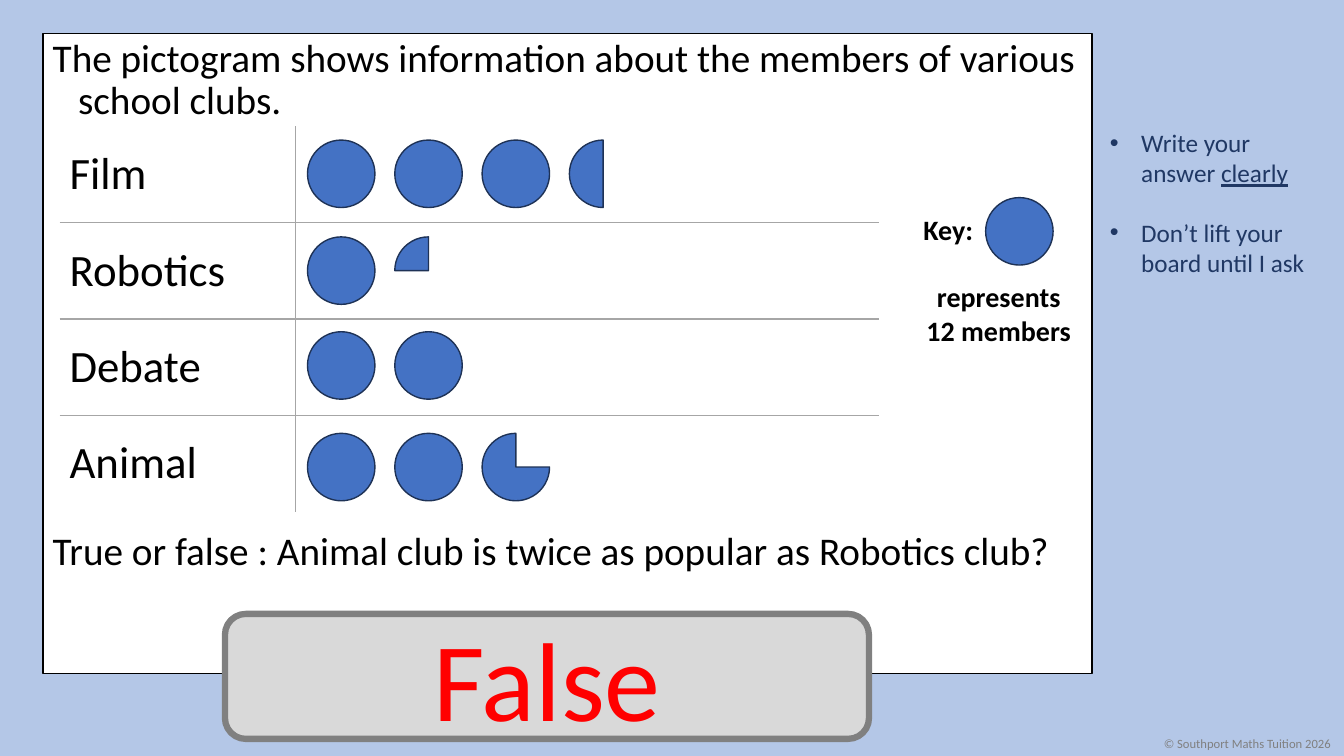
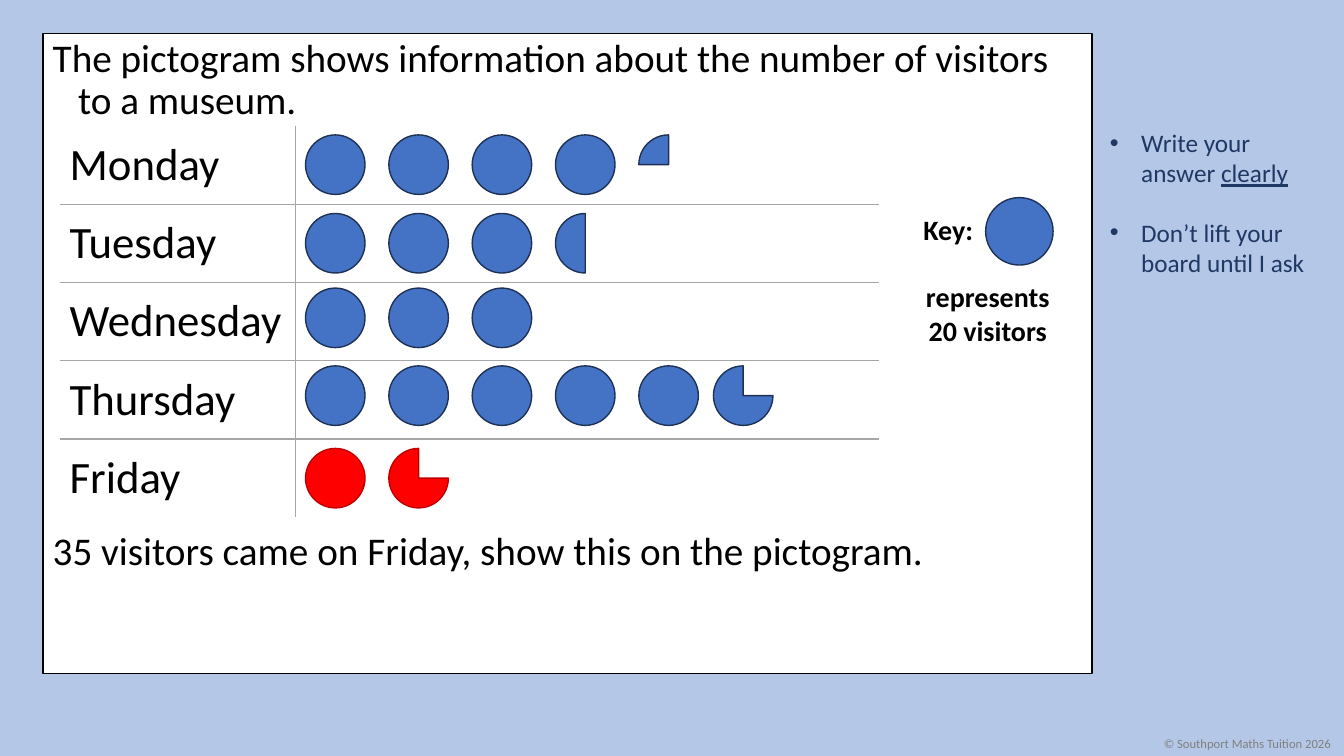
from dataclasses import dataclass

from lxml.etree import SubElement
from pptx import Presentation
from pptx.dml.color import RGBColor
from pptx.enum.shapes import MSO_SHAPE
from pptx.enum.text import MSO_ANCHOR, PP_ALIGN
from pptx.oxml.ns import qn
from pptx.util import Cm, Pt


@dataclass(frozen=True)
class Theme:
    font: str = "Calibri"
    background: str = "B4C7E7"
    panel: str = "FFFFFF"
    ink: str = "000000"
    tip: str = "203864"
    footer: str = "808080"
    grid: str = "A6A6A6"
    answer: str = "FF0000"
    button: str = "D9D9D9"
    button_edge: str = "808080"
    symbol: tuple = ("4472C4", "1E3256")
    solution: tuple = ("FF0000", "C00000")
    body_size: int = 28
    label_size: int = 32
    key_size: int = 20
    tip_size: int = 18
    footer_size: int = 9
    answer_size: int = 80


THEME = Theme()


@dataclass(frozen=True)
class Row:
    label: str
    top: float
    symbols: float
    colours: tuple = THEME.symbol
    last_shift: float = 0


TIPS = [
    [("Write your answer ", False), ("clearly", True)],
    [("Don’t lift your board until I ask", False)],
]
FOOTER = "© Southport Maths Tuition 2026"

QUESTIONS = [
    {
        "intro": "The pictogram shows information about the members of various school clubs.",
        "question": "True or false : Animal club is twice as popular as Robotics club?",
        "key": "12 members",
        "key_width": 4.3,
        "row_height": 2.43,
        "symbol": {"left": 7.75, "pitch": 2.2, "size": 1.7},
        "rows": [
            Row("Film", 3.53, 3.5),
            Row("Robotics", 5.97, 1.25),
            Row("Debate", 8.36, 2),
            Row("Animal", 10.92, 2.75),
        ],
        "answer": "False",
    },
    {
        "intro": "The pictogram shows information about the number of visitors to a museum.",
        "question": "35 visitors came on Friday, show this on the pictogram.",
        "key": "20 visitors",
        "key_width": 3.75,
        "row_height": 1.97,
        "symbol": {"left": 7.7, "pitch": 2.1, "size": 1.5},
        "rows": [
            Row("Monday", 3.4, 4.25),
            Row("Tuesday", 5.38, 3.5),
            Row("Wednesday", 7.26, 3),
            Row("Thursday", 9.22, 5.75, last_shift=-0.22),
            Row("Friday", 11.3, 1.75, THEME.solution),
        ],
        "answer": None,
    },
]

PANEL = (1.08, 0.84, 26.44, 16.13)
QUESTION_TOP = 13.26
TABLE_LEFT, TABLE_TOP = 1.5, 3.18
COLUMNS = (5.94, 14.71)


def rgb(value):
    return RGBColor.from_string(value)


def style(para, size, colour, bold=False):
    para.font.name = THEME.font
    para.font.size = Pt(size)
    para.font.bold = bold
    para.font.color.rgb = rgb(colour)


def hang(para, indent, bullet=None):
    properties = para._p.get_or_add_pPr()
    properties.set("marL", str(Cm(indent)))
    properties.set("indent", str(-Cm(indent)))
    if bullet:
        SubElement(properties, qn("a:buFont")).set("typeface", "Arial")
        SubElement(properties, qn("a:buChar")).set("char", bullet)


def add_text_box(page, place, wrap=True):
    frame = page.shapes.add_textbox(*map(Cm, place)).text_frame
    frame.word_wrap = wrap
    return frame


def add_figure(page, kind, place, fill, edge, width=1):
    figure = page.shapes.add_shape(kind, *map(Cm, place))
    figure.shadow.inherit = False
    figure.fill.solid()
    figure.fill.fore_color.rgb = rgb(fill)
    figure.line.color.rgb = rgb(edge)
    figure.line.width = Pt(width)
    return figure


def add_symbol(page, left, top, size, portion, colours):
    kind = MSO_SHAPE.OVAL if portion == 1 else MSO_SHAPE.PIE
    symbol = add_figure(page, kind, (left, top, size, size), *colours)
    if portion < 1:
        symbol.adjustments[0] = (270 - 360 * portion) * 0.6
        symbol.adjustments[1] = 270 * 0.6


def add_sentence(page, text, top, height):
    left, _, width, _ = PANEL
    para = add_text_box(page, (left, top, width, height)).paragraphs[0]
    para.text = text
    para.line_spacing = 0.9
    hang(para, 0.64)
    style(para, THEME.body_size, THEME.ink)


def add_frame(page):
    page.background.fill.solid()
    page.background.fill.fore_color.rgb = rgb(THEME.background)
    add_figure(page, MSO_SHAPE.RECTANGLE, PANEL, THEME.panel, THEME.ink)

    tips = add_text_box(page, (27.72, 3.08, 5.89, 4.11))
    for index, parts in enumerate(TIPS):
        para = tips.add_paragraph() if index else tips.paragraphs[0]
        hang(para, 0.79, "•")
        if index:
            para.space_before = Pt(21)
        style(para, THEME.tip_size, THEME.tip)
        for text, underlined in parts:
            span = para.add_run()
            span.text = text
            if underlined:
                span.font.underline = True

    footer = add_text_box(page, (29.08, 18.42, 4.78, 0.63), wrap=False).paragraphs[0]
    footer.text = FOOTER
    style(footer, THEME.footer_size, THEME.footer)


def set_borders(cell, visible):
    properties = cell._tc.get_or_add_tcPr()
    for side in "LRTB":
        line = SubElement(properties, qn(f"a:ln{side}"), w=str(Pt(1)))
        if side in visible:
            fill = SubElement(line, qn("a:solidFill"))
            SubElement(fill, qn("a:srgbClr")).set("val", THEME.grid)
        else:
            SubElement(line, qn("a:noFill"))


def add_grid(page, rows, row_height):
    place = (TABLE_LEFT, TABLE_TOP, sum(COLUMNS), row_height * len(rows))
    table = page.shapes.add_table(len(rows), len(COLUMNS), *map(Cm, place)).table
    table.first_row = table.horz_banding = False
    for column, width in zip(table.columns, COLUMNS):
        column.width = Cm(width)
    for index, row in enumerate(rows):
        table.rows[index].height = Cm(row_height)
        across = ("T" if index else "") + ("B" if index < len(rows) - 1 else "")
        for cell, upright in zip(table.rows[index].cells, "RL"):
            set_borders(cell, across + upright)
            cell.fill.background()
            cell.vertical_anchor = MSO_ANCHOR.MIDDLE
        para = table.cell(index, 0).text_frame.paragraphs[0]
        para.text = row.label
        style(para, THEME.label_size, THEME.ink)


def add_symbols(page, rows, left, pitch, size):
    for row in rows:
        whole = int(row.symbols)
        for index in range(whole):
            add_symbol(page, left + index * pitch, row.top, size, 1, row.colours)
        if row.symbols > whole:
            last = left + whole * pitch + row.last_shift
            add_symbol(page, last, row.top, size, row.symbols - whole, row.colours)


def add_key(page, value, width):
    frame = add_text_box(page, (23.02, 5.23, width, 3.68))
    for index, text in enumerate(("Key:", "represents", value)):
        para = frame.add_paragraph() if index else frame.paragraphs[0]
        para.text = text
        para.alignment = PP_ALIGN.CENTER if index else PP_ALIGN.LEFT
        style(para, THEME.key_size, THEME.ink, bold=True)
    frame.paragraphs[1].space_before = Pt(24)
    add_symbol(page, 24.84, 4.98, 1.7, 1, THEME.symbol)


def add_answer(page, text):
    button = add_figure(page, MSO_SHAPE.ROUNDED_RECTANGLE, (5.67, 15.47, 16.23, 3.15),
                        THEME.button, THEME.button_edge, 4.5)
    button.text_frame.vertical_anchor = MSO_ANCHOR.MIDDLE
    para = button.text_frame.paragraphs[0]
    para.text = text
    para.alignment = PP_ALIGN.CENTER
    style(para, THEME.answer_size, THEME.answer)


def main():
    deck = Presentation()
    deck.slide_width, deck.slide_height = Cm(33.87), Cm(19.05)
    for item in QUESTIONS:
        page = deck.slides.add_slide(deck.slide_layouts[6])
        add_frame(page)
        add_sentence(page, item["intro"], PANEL[1], 2.4)
        add_sentence(page, item["question"], QUESTION_TOP, 1.4)
        add_grid(page, item["rows"], item["row_height"])
        add_key(page, item["key"], item["key_width"])
        add_symbols(page, item["rows"], **item["symbol"])
        if item["answer"]:
            add_answer(page, item["answer"])
    deck.save("out.pptx")


if __name__ == "__main__":
    main()
